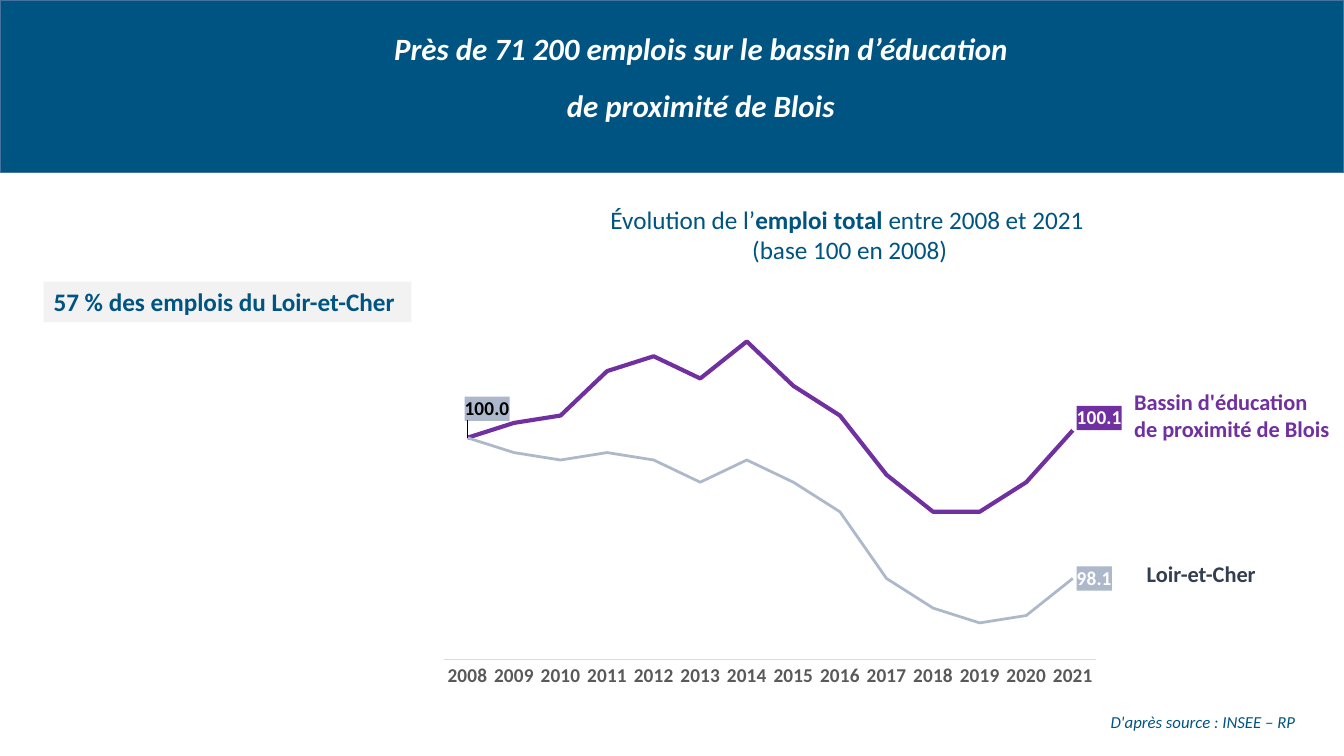
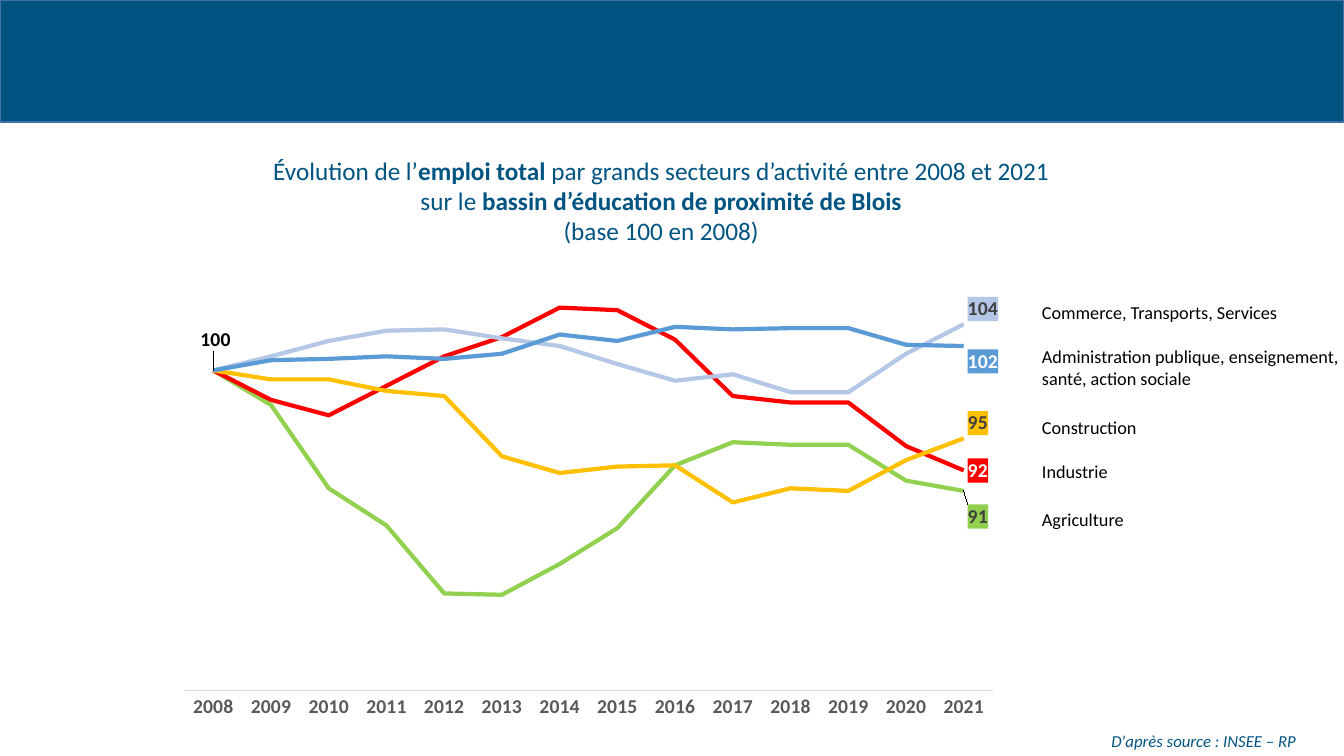
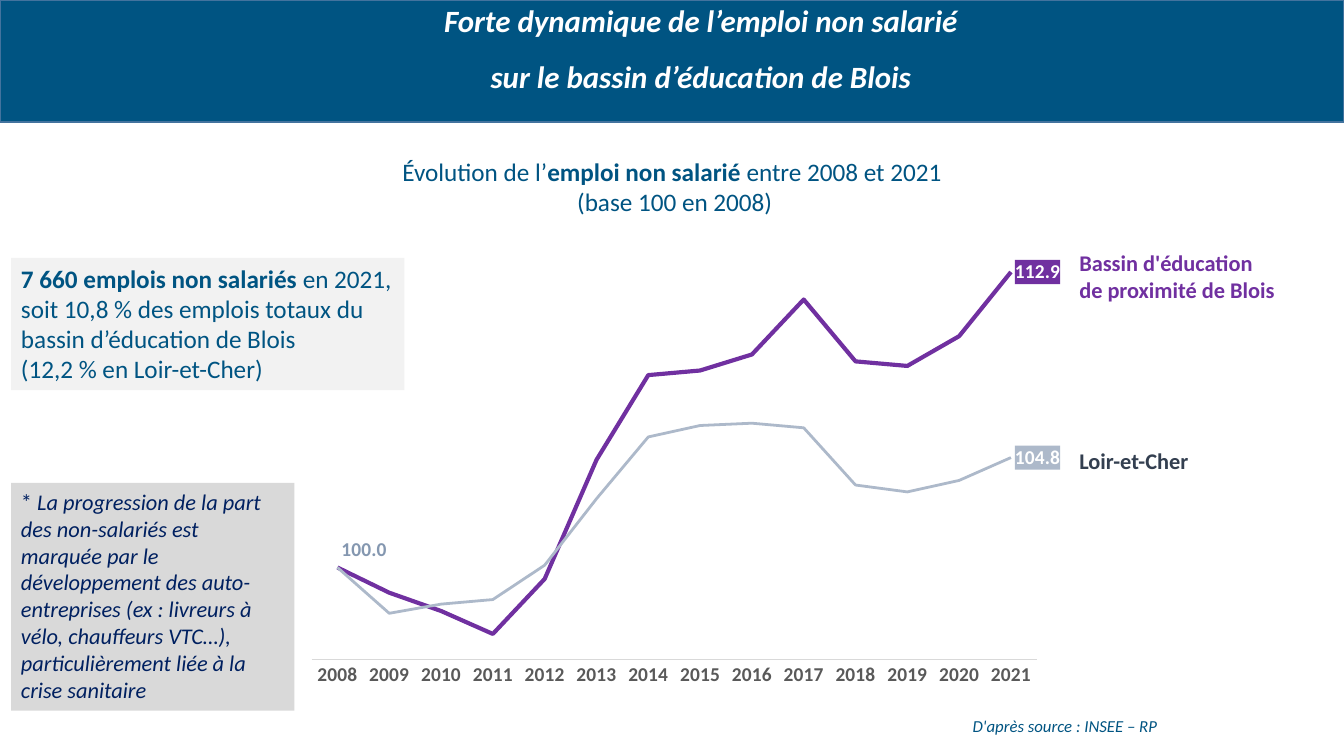
"""Build three slides on employment in the Blois education basin."""
from dataclasses import dataclass, replace

from pptx import Presentation, util as u
from pptx.chart.data import CategoryChartData
from pptx.dml.color import RGBColor
from pptx.enum import chart as charts, shapes, text
from pptx.oxml import parse_xml
from pptx.oxml.ns import nsdecls, qn


@dataclass(frozen=True)
class TextStyle:
    """Hold the look of a run of text."""
    size: float
    color: str
    bold: bool = False
    italic: bool = False


@dataclass(frozen=True)
class Theme:
    """Hold the colours, fonts and type sizes of the deck."""
    font: str = "Calibri"
    blue: str = "005482"
    band_line: str = "43739E"
    white: str = "FFFFFF"
    black: str = "000000"
    dark: str = "404040"
    grey: str = "D9D9D9"
    pale: str = "F2F2F2"
    purple: str = "7030A0"
    steel: str = "ADB9CA"
    steel_text: str = "8497B0"
    green: str = "92D050"
    red: str = "FF0000"
    amber: str = "FFC000"
    light_blue: str = "B4C7E7"
    mid_blue: str = "5B9BD5"
    title: TextStyle = TextStyle(22.1, "FFFFFF", True, True)
    body: TextStyle = TextStyle(18, "005482")
    strong: TextStyle = TextStyle(18, "005482", True)
    remark: TextStyle = TextStyle(16, "002060")
    source: TextStyle = TextStyle(12, "005482", italic=True)
    basin: TextStyle = TextStyle(16, "7030A0", True)
    department: TextStyle = TextStyle(16, "333F50", True)
    sector: TextStyle = TextStyle(13, "000000")
    axis: TextStyle = TextStyle(14, "595959", True)


@dataclass(frozen=True)
class PointLabel:
    """Describe the value label of one point, with its shift in chart fractions."""
    point: int
    color: str
    fill: str = ""
    shift: tuple = (0, 0)


@dataclass(frozen=True)
class Curve:
    """Describe one line of a chart."""
    name: str
    values: tuple
    color: str
    labels: tuple
    width: float = 3


THEME = Theme()
WIDTH, HEIGHT = 33.87, 19.05
YEARS = [str(year) for year in range(2008, 2022)]
LAST = len(YEARS) - 1
BASIN = "Bassin d'éducation de proximité de Blois"
DEPARTMENT = "Loir-et-Cher"


def lengths(box):
    """Turn centimetres into slide lengths."""
    return [u.Cm(value) for value in box]


def apply_font(font, style):
    """Give a font the look of a text style."""
    font.name = THEME.font
    font.size = u.Pt(style.size)
    font.bold = style.bold
    font.italic = style.italic
    font.color.rgb = RGBColor.from_string(style.color)


def write(shape, paragraphs, align=text.PP_ALIGN.LEFT):
    """Fill a shape with paragraphs made of (text, style) runs."""
    frame = shape.text_frame
    frame.word_wrap = True
    frame.vertical_anchor = text.MSO_ANCHOR.TOP
    for index, runs in enumerate(paragraphs):
        paragraph = frame.add_paragraph() if index else frame.paragraphs[0]
        paragraph.alignment = align
        for content, style in runs:
            run = paragraph.add_run()
            run.text = content
            apply_font(run.font, style)
    return frame


def add_text(slide, box, paragraphs, align=text.PP_ALIGN.LEFT):
    """Add a plain text box."""
    return write(slide.shapes.add_textbox(*lengths(box)), paragraphs, align)


def add_panel(slide, box, fill, paragraphs=(), align=text.PP_ALIGN.LEFT, line=None):
    """Add a filled rectangle, with or without text."""
    panel = slide.shapes.add_shape(shapes.MSO_SHAPE.RECTANGLE, *lengths(box))
    panel.shadow.inherit = False
    panel.fill.solid()
    panel.fill.fore_color.rgb = RGBColor.from_string(fill)
    if line:
        panel.line.color.rgb = RGBColor.from_string(line)
        panel.line.width = u.Pt(1)
    else:
        panel.line.fill.background()
    write(panel, paragraphs, align)


def add_band(slide, height):
    """Add the blue band at the top."""
    add_panel(slide, (0, 0, WIDTH, height), THEME.blue, line=THEME.band_line)


def add_title(slide, top, height, lines):
    """Add the white title over the band."""
    frame = add_text(slide, (2.18, top, 30.96, height),
                     [[(line, THEME.title)] for line in lines], text.PP_ALIGN.CENTER)
    frame.vertical_anchor = text.MSO_ANCHOR.BOTTOM
    frame.margin_top = 0
    frame.margin_bottom = u.Cm(0.64)
    for index, paragraph in enumerate(frame.paragraphs):
        paragraph.line_spacing = 0.9
        paragraph.space_before = u.Pt(16.5 if index else 0)


def add_heading(slide, box, topic):
    """Add the heading of a two-line chart."""
    add_panel(slide, box, THEME.white, [
        [("Évolution de l’", THEME.body), (topic + " ", THEME.strong),
         ("entre 2008 et 2021", THEME.body)],
        [(" (base 100 en 2008)", THEME.body)]], text.PP_ALIGN.CENTER)


def add_source(slide, left, top):
    """Add the source line."""
    frame = add_text(slide, (left, top, 5.38, 0.76),
                     [[("D'après source : INSEE – RP", THEME.source)]])
    frame.word_wrap = False


def add_sector(slide, top, width, height, name):
    """Add the name of a sector beside its curve."""
    frame = add_text(slide, (26.01, top, width, height), [[(name, THEME.sector)]])
    frame.margin_right = 0


def add_point_label(series, label, number_format):
    """Show the value of one point of a series."""
    data_label = series.points[label.point].data_label
    apply_font(data_label.font, replace(THEME.axis, color=label.color))
    data_label.position = charts.XL_LABEL_POSITION.RIGHT
    series.data_labels.show_value = False
    across, down = label.shift
    spaces = nsdecls("c", "a")
    parts = [f'<c:numFmt {spaces} formatCode="{number_format}" sourceLinked="0"/>']
    if any(label.shift):
        parts.insert(0, f'<c:layout {spaces}><c:manualLayout><c:x val="{across}"/>'
                        f'<c:y val="{down}"/></c:manualLayout></c:layout>')
    if label.fill:
        parts.append(f'<c:spPr {spaces}><a:solidFill><a:srgbClr val="{label.fill}"/>'
                     '</a:solidFill></c:spPr>')
    element = data_label._get_or_add_dLbl()
    for default in element.findall(qn("c:spPr")):
        element.remove(default)
    for index, part in enumerate(parts, 1):
        element.insert(index, parse_xml(part))


def show_leaders(series):
    """Link shifted labels to their points."""
    series.data_labels._element.append(parse_xml(
        f'<c:extLst {nsdecls("c")}><c:ext uri="{{CE6537A1-D6FC-4f65-9D91-7224C49458BB}}" '
        'xmlns:c15="http://schemas.microsoft.com/office/drawing/2012/chart">'
        '<c15:showLeaderLines val="1"/></c:ext></c:extLst>'))


def set_plot_area(chart, **fractions):
    """Fix the inner plot area as fractions of the chart."""
    area = chart._chartSpace.chart.plotArea
    for layout in area.findall(qn("c:layout")):
        area.remove(layout)
    values = "".join(f'<c:{key} val="{value}"/>' for key, value in fractions.items())
    area.insert(0, parse_xml(
        f'<c:layout {nsdecls("c")}><c:manualLayout><c:layoutTarget val="inner"/>'
        '<c:xMode val="edge"/><c:yMode val="edge"/>'
        f'{values}</c:manualLayout></c:layout>'))


def add_line_chart(slide, box, curves, scale, number_format):
    """Add a line chart with a hidden value axis."""
    data = CategoryChartData(number_format=number_format)
    data.categories = YEARS
    for curve in curves:
        data.add_series(curve.name, curve.values)
    frame = slide.shapes.add_chart(charts.XL_CHART_TYPE.LINE, *lengths(box), data)
    chart = frame.chart
    apply_font(chart.font, TextStyle(10, THEME.black))
    chart.has_legend = False
    chart.has_title = False
    values = chart.value_axis
    values.visible = False
    values.has_major_gridlines = False
    values.minimum_scale, values.maximum_scale = scale
    years = chart.category_axis
    years.major_tick_mark = charts.XL_TICK_MARK.NONE
    years.minor_tick_mark = charts.XL_TICK_MARK.NONE
    years.tick_label_position = charts.XL_TICK_LABEL_POSITION.NEXT_TO_AXIS
    years.format.line.color.rgb = RGBColor.from_string(THEME.grey)
    years.format.line.width = u.Pt(0.75)
    apply_font(years.tick_labels.font, THEME.axis)
    plot = chart.plots[0]
    plot.vary_by_categories = False
    for series, curve in zip(plot.series, curves):
        series.smooth = False
        series.format.line.color.rgb = RGBColor.from_string(curve.color)
        series.format.line.width = u.Pt(curve.width)
        for label in curve.labels:
            add_point_label(series, label, number_format)
        show_leaders(series)
    return chart


def basin_curve(values, shift=(0, 0)):
    """Describe the curve of the basin."""
    return Curve(BASIN, values, THEME.purple,
                 (PointLabel(LAST, THEME.white, THEME.purple, shift),))


def department_curve(values, first_label):
    """Describe the curve of the department."""
    return Curve(DEPARTMENT, values, THEME.steel,
                 (first_label, PointLabel(LAST, THEME.white, THEME.steel)), 2)


def build_total(slide):
    """Build the slide on total employment."""
    add_band(slide, 4.35)
    add_title(slide, 0.48, 3.28, ("Près de 71 200 emplois sur le bassin d’éducation",
                                  "de proximité de Blois"))
    add_heading(slide, (10.36, 5.03, 21.97, 1.8), "emploi total")
    add_source(slide, 27.74, 17.81)
    add_text(slide, (28.65, 14, 3.56, 0.94), [[(DEPARTMENT, THEME.department)]])
    add_text(slide, (28.33, 9.65, 5.51, 1.63), [[(BASIN, THEME.basin)]])
    add_panel(slide, (1.1, 7.1, 9.27, 1.02), THEME.pale,
              [[("57 % des emplois du Loir-et-Cher", THEME.strong)]])
    add_line_chart(slide, (10.85, 7.09, 17.42, 10.46), (
        basin_curve((100, 100.2, 100.3, 100.9, 101.1, 100.8, 101.3, 100.7, 100.3,
                     99.5, 99, 99, 99.4, 100.1), (0, -0.03)),
        department_curve((100, 99.8, 99.7, 99.8, 99.7, 99.4, 99.7, 99.4, 99,
                          98.1, 97.7, 97.5, 97.6, 98.1),
                         PointLabel(0, THEME.black, THEME.steel, (-0.01, -0.07))),
    ), (97, 102), "0.0")


def build_sectors(slide):
    """Build the slide on employment by sector."""
    add_band(slide, 3.08)
    add_text(slide, (5.26, 3.78, 22.81, 2.57), [
        [("Évolution de l’", THEME.body), ("emploi total ", THEME.strong),
         ("par grands secteurs d’activité entre 2008 et 2021", THEME.body)],
        [("sur le ", THEME.body),
         ("bassin d’éducation de proximité de Blois", THEME.strong)],
        [("(base 100 en 2008)", THEME.body)]], text.PP_ALIGN.CENTER)
    add_source(slide, 27.76, 18.28)
    trade = "Commerce, Transports, Services"
    public = "Administration publique, enseignement, santé, action sociale"
    for top, width, height, name in (
            (7.47, 6.63, 0.81, trade), (8.58, 7.85, 1.37, public),
            (10.36, 2.97, 0.81, "Construction"), (11.48, 2.24, 0.81, "Industrie"),
            (12.69, 2.64, 0.81, "Agriculture")):
        add_sector(slide, top, width, height, name)
    sectors = (
        ("Agriculture", THEME.green, THEME.dark, 0.05,
         (100, 97.3, 90.8, 87.9, 82.6, 82.5, 84.9, 87.7, 92.6, 94.4, 94.2, 94.2,
          91.4, 90.6)),
        ("Industrie", THEME.red, THEME.white, 0,
         (100, 97.7, 96.5, 98.8, 101.1, 102.6, 104.9, 104.7, 102.4, 98, 97.5, 97.5,
          94.1, 92.2)),
        ("Construction", THEME.amber, THEME.dark, -0.03,
         (100, 99.3, 99.3, 98.4, 98, 93.3, 92, 92.5, 92.6, 89.7, 90.8, 90.6,
          93, 94.7)),
        (trade, THEME.light_blue, THEME.dark, -0.03,
         (100, 101.1, 102.3, 103.1, 103.2, 102.5, 101.9, 100.5, 99.2, 99.7, 98.3,
          98.3, 101.3, 103.6)),
        (public, THEME.mid_blue, THEME.white, 0.03,
         (100, 100.8, 100.9, 101.1, 100.9, 101.3, 102.8, 102.3, 103.4, 103.2, 103.3,
          103.3, 102, 101.9)))
    start = PointLabel(0, THEME.black, shift=(-0.02, -0.06))
    curves = [
        Curve(name, values, color,
              ((start,) if name == public else ())
              + (PointLabel(LAST, label_color, color, (0, down)),))
        for name, color, label_color, down, values in sectors]
    chart = add_line_chart(slide, (4.22, 5.72, 21.44, 12.85), curves, (75, 110), "0")
    set_plot_area(chart, x=0.02, y=0.03, w=0.95, h=0.88)


def build_self_employed(slide):
    """Build the slide on self-employment."""
    add_band(slide, 3.08)
    add_title(slide, 0.2, 2.85, ("Forte dynamique de l’emploi non salarié",
                                 "sur le bassin d’éducation de Blois"))
    add_heading(slide, (0, 3.81, WIDTH, 1.8), "emploi non salarié")
    add_source(slide, 24.26, 17.91)
    add_text(slide, (26.95, 6.15, 5.77, 1.63),
             [[("Bassin d'éducation", THEME.basin)],
              [("de proximité de Blois", THEME.basin)]])
    add_panel(slide, (0.28, 6.5, 9.91, 3.33), THEME.pale, [
        [("7 660 emplois non salariés", THEME.strong),
         (" en 2021, soit 10,8 % des emplois totaux du bassin d’éducation de Blois",
          THEME.body)],
        [("(12,2 % en Loir-et-Cher)", THEME.body)]])
    add_line_chart(slide, (7.47, 5.99, 19.25, 11.56), (
        basin_curve((100, 98.9, 98.1, 97.1, 99.5, 104.7, 108.4, 108.6, 109.3,
                     111.7, 109, 108.8, 110.1, 112.9)),
        department_curve((100, 98, 98.4, 98.6, 100.1, 103, 105.7, 106.2, 106.3,
                          106.1, 103.6, 103.3, 103.8, 104.8),
                         PointLabel(0, THEME.steel_text, shift=(0, -0.04))),
    ), (96, 114), "0.0")
    add_text(slide, (26.95, 11.15, 3.56, 0.94), [[(DEPARTMENT, THEME.department)]])
    add_panel(slide, (0.28, 12.17, 7.14, 5.74), THEME.grey, [
        [("* ", THEME.remark),
         ("La progression de la part des non-salariés est marquée par le développement "
          "des auto-entreprises (ex : livreurs à vélo, chauffeurs VTC…), "
          "particulièrement liée à la crise sanitaire",
          replace(THEME.remark, italic=True))]])


def main():
    """Build and save the presentation."""
    presentation = Presentation()
    presentation.slide_width, presentation.slide_height = lengths((WIDTH, HEIGHT))
    for build in (build_total, build_sectors, build_self_employed):
        build(presentation.slides.add_slide(presentation.slide_layouts[6]))
    presentation.save("out.pptx")


if __name__ == "__main__":
    main()
